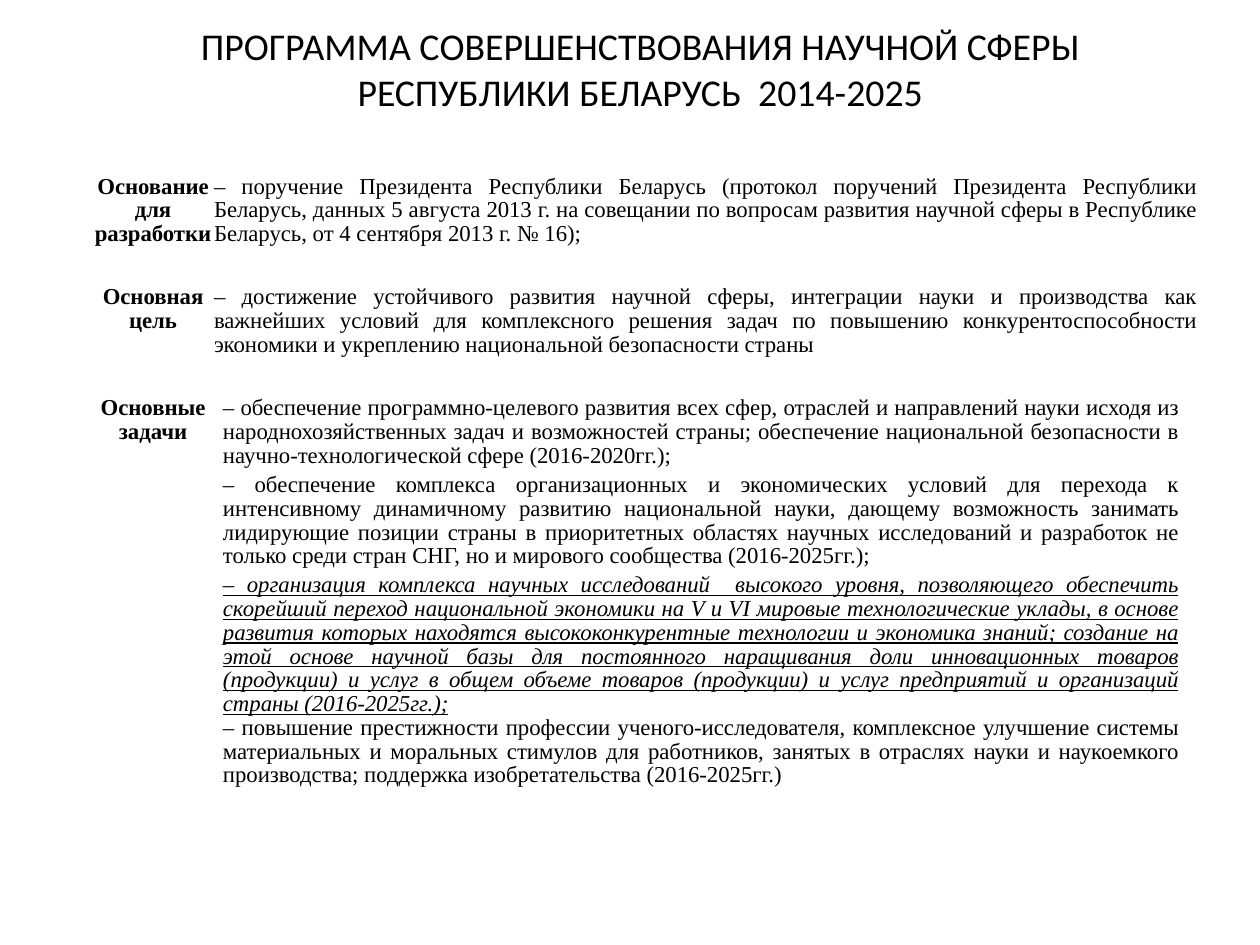
import pptx
import pptx.util
import pptx.dml.color
import pptx.enum.text

PX = 914400 // 126
COLORS = {"text": "000000"}
ALIGN = pptx.enum.text.PP_ALIGN
ANCHOR = pptx.enum.text.MSO_ANCHOR
NO_STYLE = "{2D5ABB26-0587-4C30-8999-92F81FD0307C}"


def style_font(font, **values):
    for name, value in values.items():
        setattr(font, name, value)
    font.color.rgb = pptx.dml.color.RGBColor.from_string(COLORS["text"])


prs = pptx.Presentation()
prs.slide_width, prs.slide_height = 1260 * PX, 945 * PX
s = prs.slides.add_slide(prs.slide_layouts[5])

# Title, with a closing line break that lifts the two lines
title = s.shapes.title
title.left, title.top, title.width, title.height = [v * PX for v in (105, 36, 1071, 110)]
tf = title.text_frame
tf.word_wrap = True
tf.vertical_anchor = ANCHOR.MIDDLE
p = tf.paragraphs[0]
p.text = "ПРОГРАММА СОВЕРШЕНСТВОВАНИЯ НАУЧНОЙ СФЕРЫ РЕСПУБЛИКИ БЕЛАРУСЬ  2014-2025\v"
p.alignment = ALIGN.CENTER
style_font(p.font, name="Calibri", size=pptx.util.Pt(21.6))
for r in p.runs:
    style_font(r.font, name="Calibri", size=pptx.util.Pt(21.6))

# Programme rows: heading, then the paragraphs beside it
rows = [
    ("Основание для разработки", [
        "– поручение Президента Республики Беларусь (протокол поручений Президента Республики Беларусь, данных 5 августа 2013 г. на совещании по вопросам развития научной сферы в Республике Беларусь, от 4 сентября 2013 г. № 16);",
    ]),
    ("Основная цель", [
        "– достижение устойчивого развития научной сферы, интеграции науки и производства как важнейших условий для комплексного решения задач по повышению конкурентоспособности экономики и укреплению национальной безопасности страны",
    ]),
    ("Основные задачи", [
        "– обеспечение программно-целевого развития всех сфер, отраслей и направлений науки исходя из народнохозяйственных задач и возможностей страны; обеспечение национальной безопасности в научно-технологической сфере (2016-2020гг.);",
        "– обеспечение комплекса организационных и экономических условий для перехода к интенсивному динамичному развитию национальной науки, дающему возможность занимать лидирующие позиции страны в приоритетных областях научных исследований и разработок не только среди стран СНГ, но и мирового сообщества (2016-2025гг.);",
        "– организация комплекса научных исследований  высокого уровня, позволяющего обеспечить скорейший переход национальной экономики на V и VI мировые технологические уклады, в основе развития которых находятся высококонкурентные технологии и экономика знаний; создание на этой основе научной базы для постоянного наращивания доли инновационных товаров (продукции) и услуг в общем объеме товаров (продукции) и услуг предприятий и организаций страны (2016-2025гг.);",
        "– повышение престижности профессии ученого-исследователя, комплексное улучшение системы материальных и моральных стимулов для работников, занятых в отраслях науки и наукоемкого производства; поддержка изобретательства (2016-2025гг.)",
    ]),
]
emphasized = rows[2][1][2]

# Plain table without borders
frame = s.shapes.add_table(3, 2, 92 * PX, 175 * PX, 1104 * PX, 674 * PX)
table = frame.table
table.first_row = table.horz_banding = False
table._tbl.tblPr.find(pptx.oxml.ns.qn("a:tableStyleId")).text = NO_STYLE
for column, width in zip(table.columns, (122, 982)):
    column.width = width * PX
for row, height in zip(table.rows, (111, 111, 452)):
    row.height = height * PX

for i, (heading, details) in enumerate(rows):
    for j, texts in enumerate(([heading], details)):
        cell = table.cell(i, j)
        cell.fill.background()
        for side in ("left", "right", "top", "bottom"):
            setattr(cell, f"margin_{side}", 0)
        tf = cell.text_frame
        for k, text in enumerate(texts):
            p = tf.paragraphs[0] if k == 0 else tf.add_paragraph()
            p.alignment = ALIGN.JUSTIFY if j else ALIGN.CENTER
            p.line_spacing = 0.95
            special = text == emphasized
            if len(texts) > 1:  # the task list is inset on both sides
                pPr = p._p.get_or_add_pPr()
                for name, value in {"marL": 9, "marR": 18, "indent": 0}.items():
                    pPr.set(name, str(value * PX))
                p.space_after = pptx.util.Pt(0 if special else 3)
            r = p.add_run()
            r.text = text
            style_font(r.font, name="Times New Roman", size=pptx.util.Pt(13),
                       bold=j == 0, italic=special, underline=special)

prs.save("out.pptx")
